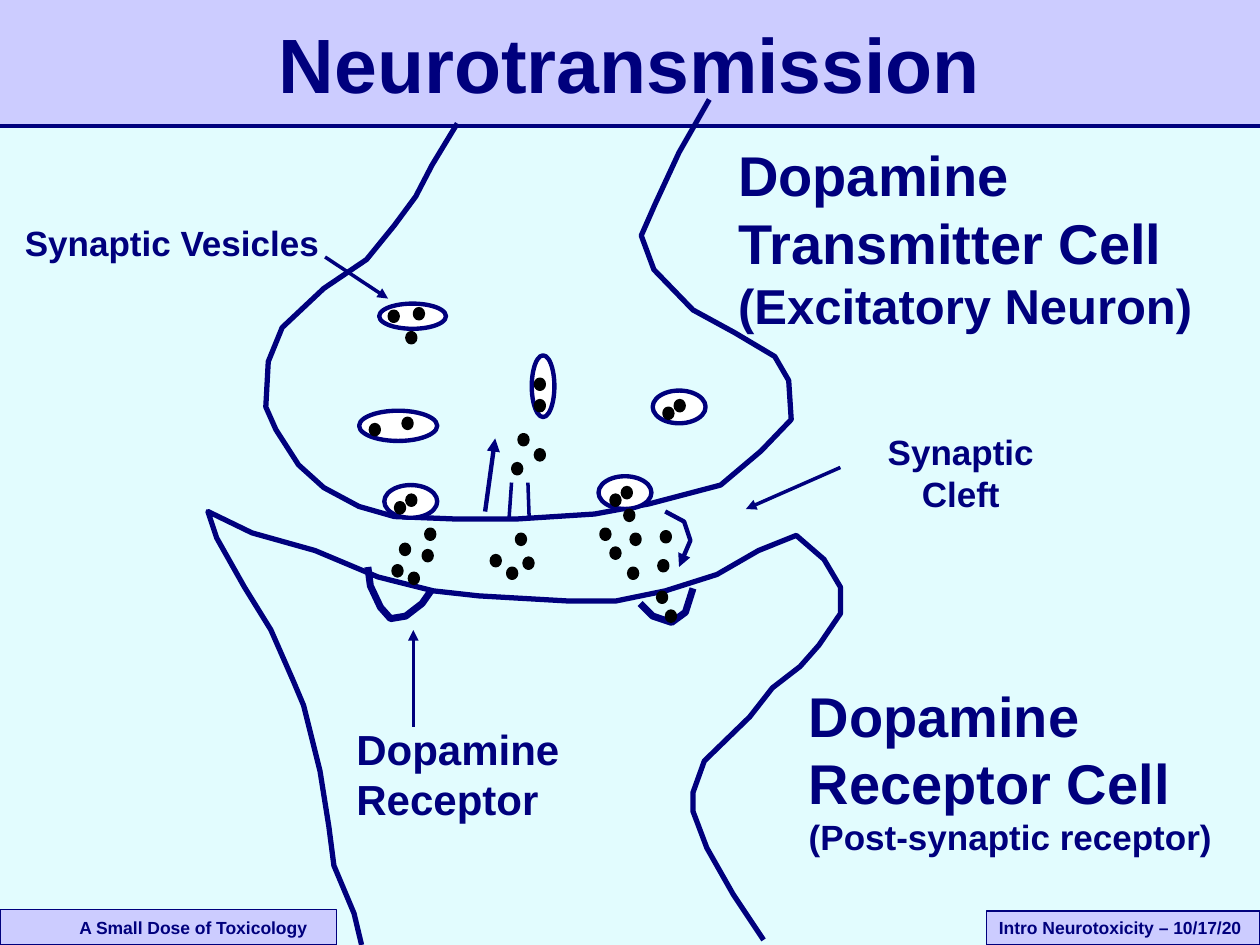
from typing import NamedTuple

from lxml.etree import SubElement
from pptx import Presentation
from pptx.dml.color import RGBColor as RGB
from pptx.enum.shapes import MSO_CONNECTOR as CONN, MSO_SHAPE as SHAPE
from pptx.enum.text import MSO_ANCHOR as ANCHOR, PP_ALIGN as ALIGN
from pptx.oxml.ns import qn
from pptx.util import Inches, Pt


class Theme:
    FONT = "Arial"
    NAVY = RGB.from_string("00007D")
    LILAC = RGB.from_string("CCCCFF")
    PALE = RGB.from_string("E2FCFE")
    WHITE = RGB.from_string("FFFFFF")
    BLACK = RGB.from_string("000000")
    TITLE, CELL, NEURON, RECEPTOR, LABEL, FOOTER = 44, 32, 28, 24, 20, 10


class Box(NamedTuple):
    left: float
    top: float
    width: float
    height: float


class Label(NamedTuple):
    box: Box
    lines: list  # (text, size) pairs
    align: ALIGN = ALIGN.LEFT
    wrap: bool = False
    inset: float = 0.1


class Line(NamedTuple):
    start: tuple
    end: tuple
    width: float = 2
    arrow: bool = True


class Curve(NamedTuple):
    points: list
    width: float = 3
    arrow: bool = False


TRANSMITTER = Curve([
    (3.63, 0.98), (3.43, 1.31), (3.3, 1.56), (3.13, 1.79), (2.91, 2.06), (2.57, 2.29),
    (2.24, 2.6), (2.13, 2.87), (2.11, 3.23), (2.19, 3.41), (2.37, 3.69), (2.57, 3.87),
    (2.85, 4.02), (3.13, 4.1), (3.63, 4.12), (4.09, 4.12), (4.72, 4.08), (5.15, 4),
    (5.72, 3.85), (6.04, 3.58), (6.28, 3.33), (6.26, 3.02), (6.15, 2.83), (5.83, 2.64),
    (5.5, 2.46), (5.19, 2.14), (5.09, 1.87), (5.2, 1.62), (5.39, 1.21), (5.63, 0.79)])
RECEPTOR = Curve([
    (2.87, 7.5), (2.81, 7.25), (2.65, 6.87), (2.61, 6.56), (2.54, 6.12), (2.41, 5.6),
    (2.33, 5.41), (2.15, 5), (1.94, 4.66), (1.72, 4.27), (1.65, 4.06), (2, 4.23),
    (2.5, 4.37), (3, 4.58), (3.44, 4.69), (3.8, 4.73), (4.5, 4.77), (4.89, 4.77),
    (5.28, 4.69), (5.69, 4.56), (6.02, 4.37), (6.32, 4.25), (6.54, 4.44), (6.67, 4.66),
    (6.67, 4.87), (6.5, 5.12), (6.35, 5.29), (6.13, 5.46), (5.95, 5.69), (5.59, 6.04),
    (5.5, 6.29), (5.5, 6.44), (5.61, 6.73), (5.82, 7.1), (6.06, 7.46)])
LEFT_SITE = Curve([(3.42, 4.69), (3.35, 4.79), (3.22, 4.89), (3.1, 4.91),
                   (3.02, 4.82), (2.94, 4.65), (2.92, 4.5)], 4)
RIGHT_SITE = Curve([(5.08, 4.79), (5.18, 4.89), (5.33, 4.94), (5.44, 4.86), (5.5, 4.67)], 4)
RELEASE = Curve([(5.28, 4.06), (5.43, 4.14), (5.48, 4.29), (5.39, 4.5)], 2.5, True)

VESICLES = [Box(3.01, 2.41, 0.53, 0.2), Box(4.22, 2.82, 0.18, 0.49), Box(2.85, 3.26, 0.62, 0.24),
            Box(5.18, 3.1, 0.42, 0.26), Box(4.75, 3.78, 0.42, 0.26), Box(3.05, 3.85, 0.42, 0.26)]
DOPAMINE = [
    (3.09, 2.47), (3.29, 2.45), (2.94, 3.37), (3.2, 3.32), (4.25, 3.01), (5.01, 4.24),
    (4.96, 4.05), (3.23, 2.64), (4.77, 4.2), (5.25, 4.22), (4.85, 4.35), (5.36, 3.18),
    (4.25, 3.18), (5.27, 3.24), (4.94, 3.87), (4.85, 3.93), (4.99, 4.51), (4.16, 4.43),
    (5.29, 4.85), (3.25, 4.55), (3.12, 4.49), (3.36, 4.37), (5.23, 4.45), (3.18, 4.32),
    (3.38, 4.2), (3.23, 3.93), (3.14, 3.99), (4.03, 4.51), (4.25, 3.57), (5.22, 4.7),
    (4.12, 3.45), (4.07, 3.68), (3.9, 4.41), (4.1, 4.24)]
LINES = [Line((4.04, 4.12), (4.06, 3.83), arrow=False), Line((4.2, 4.12), (4.19, 3.83), arrow=False),
         Line((3.85, 4.06), (3.93, 3.48), 2.5), Line((3.28, 5.77), (3.28, 5)),
         Line((6.67, 3.71), (5.92, 4.04)), Line((2.58, 2.04), (3.08, 2.37))]
LABELS = [
    Label(Box(5.76, 1.07, 3.82, 1.63), [("Dopamine", Theme.CELL), ("Transmitter Cell", Theme.CELL),
                                        ("(Excitatory Neuron)", Theme.NEURON)], wrap=True),
    Label(Box(6.32, 5.36, 3.68, 1.5), [("Dopamine", Theme.CELL), ("Receptor Cell", Theme.CELL),
                                       ("(Post-synaptic receptor)", Theme.LABEL)], wrap=True),
    Label(Box(2.73, 5.69, 1.81, 0.9), [("Dopamine", Theme.RECEPTOR), ("Receptor", Theme.RECEPTOR)]),
    Label(Box(6.6, 3.37, 2.05, 0.43), [("Synaptic Cleft", Theme.LABEL)], ALIGN.CENTER, True, 0.3),
    Label(Box(0.09, 1.71, 2.55, 0.43), [("Synaptic Vesicles", Theme.LABEL)], ALIGN.CENTER)]
FOOTERS = [
    Label(Box(0, 7.22, 2.67, 0.28), [("A Small Dose of Toxicology", Theme.FOOTER)], inset=0.63),
    Label(Box(7.83, 7.23, 2.17, 0.27), [("Intro Neurotoxicity – 10/17/20", Theme.FOOTER)])]


def style_line(sp, width: float, arrow: bool = False, color: RGB = Theme.NAVY) -> None:
    sp.line.color.rgb = color
    sp.line.width = Pt(width)
    if arrow:
        SubElement(sp._element.spPr.find(qn("a:ln")), qn("a:tailEnd"), type="triangle")


def add_filled(s, kind: SHAPE, box: Box, fill: RGB, width: float = 0, color: RGB = Theme.NAVY):
    sp = s.shapes.add_shape(kind, *map(Inches, box))
    sp.shadow.inherit = False
    sp.fill.solid()
    sp.fill.fore_color.rgb = fill
    if width:
        style_line(sp, width, color=color)
    else:
        sp.line.fill.background()
    return sp


def add_line(s, line: Line) -> None:
    cxn = s.shapes.add_connector(CONN.STRAIGHT, *map(Inches, line.start + line.end))
    style_line(cxn, line.width, line.arrow)
    SubElement(cxn._element.spPr, qn("a:effectLst"))


def add_curve(s, curve: Curve) -> None:
    start, *rest = [(Inches(x), Inches(y)) for x, y in curve.points]
    builder = s.shapes.build_freeform(*start)
    builder.add_line_segments(rest, close=False)
    sp = builder.convert_to_shape()
    sp.shadow.inherit = False
    sp.fill.background()
    style_line(sp, curve.width, curve.arrow)


def write(tf, label: Label) -> None:
    tf.word_wrap = label.wrap
    tf.margin_left = Inches(label.inset)
    tf.margin_right = Inches(label.inset if label.wrap else 0.1)
    tf.text = "\n".join(text for text, _ in label.lines)
    for p, (_, size) in zip(tf.paragraphs, label.lines):
        p.alignment = label.align
        font = p.runs[0].font
        font.name, font.size, font.bold = Theme.FONT, Pt(size), True
        font.color.rgb = Theme.NAVY


def main() -> None:
    prs = Presentation()
    prs.slide_width, prs.slide_height = Inches(10), Inches(7.5)
    s = prs.slides.add_slide(prs.slide_layouts[5])
    s.background.fill.solid()
    s.background.fill.fore_color.rgb = Theme.PALE
    add_filled(s, SHAPE.RECTANGLE, Box(0, 0, 10, 1), Theme.LILAC)
    add_line(s, Line((0, 1), (10, 1), arrow=False))
    for footer in FOOTERS:
        sp = add_filled(s, SHAPE.RECTANGLE, footer.box, Theme.LILAC, 0.75)
        write(sp.text_frame, footer)
    for curve in (TRANSMITTER, RECEPTOR, LEFT_SITE, RIGHT_SITE, RELEASE):
        add_curve(s, curve)
    for box in VESICLES:
        add_filled(s, SHAPE.OVAL, box, Theme.WHITE, 2.5)
    for x, y in DOPAMINE:
        add_filled(s, SHAPE.OVAL, Box(x, y, 0.07, 0.08), Theme.BLACK, 2, Theme.BLACK)
    for line in LINES:
        add_line(s, line)
    for label in LABELS:
        write(s.shapes.add_textbox(*map(Inches, label.box)).text_frame, label)

    title, box = s.shapes.title, Box(0.75, 0.08, 8.5, 0.83)
    title.left, title.top, title.width, title.height = map(Inches, box)
    write(title.text_frame, Label(box, [("Neurotransmission", Theme.TITLE)], ALIGN.CENTER, True))
    title.text_frame.vertical_anchor = ANCHOR.MIDDLE
    s.shapes._spTree.append(title._element)  # bring the title in front of the band
    prs.save("out.pptx")


if __name__ == "__main__":
    main()
